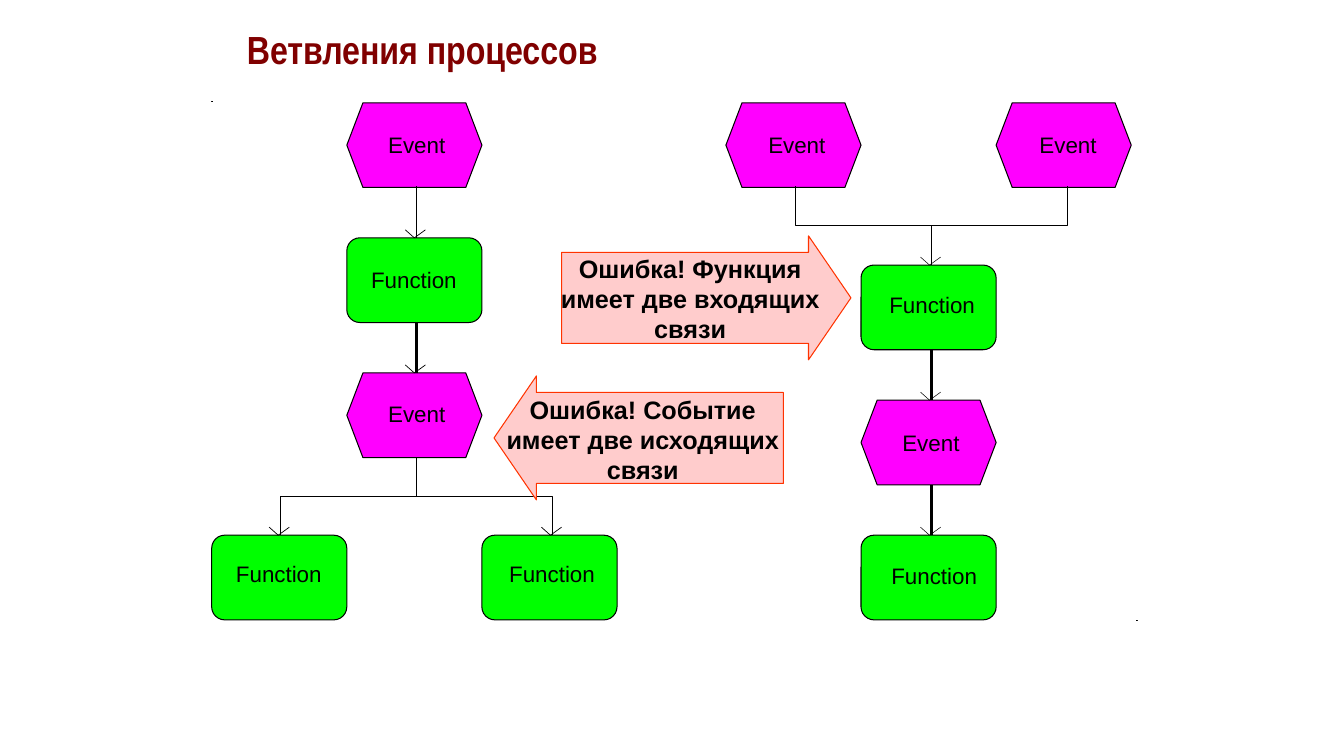
from lxml.etree import SubElement
from pptx import Presentation
from pptx.dml.color import RGBColor
from pptx.enum.shapes import MSO_CONNECTOR, MSO_SHAPE
from pptx.enum.text import MSO_AUTO_SIZE, PP_ALIGN
from pptx.oxml.ns import qn
from pptx.util import Inches, Pt

LABEL = {"size": Pt(16), "name": "Arial"}
NOTE = {"size": Pt(18), "name": "Arial", "bold": True}
TITLE = {"size": Pt(28), "name": "Arial Narrow", "bold": True}


def rgb(value):
    return RGBColor.from_string(value)


class Diagram:
    node_w, node_h, corner = 1.34, 0.84, 0.16
    ink, event_fill, function_fill = "000000", "FF00FF", "00FF00"
    note_fill, note_line = "FFCCCC", "FF3300"

    def __init__(self, slide):
        self.shapes = slide.shapes

    def paint(self, sp, fill, line, width):
        sp.shadow.inherit = False
        if fill:
            sp.fill.solid()
            sp.fill.fore_color.rgb = rgb(fill)
        else:
            sp.fill.background()
        sp.line.color.rgb = rgb(line)
        sp.line.width = Pt(width)

    def text(self, x, y, w, h, words, font, color=ink, align=PP_ALIGN.LEFT, tight=False):
        tf = self.shapes.add_textbox(Inches(x), Inches(y), Inches(w), Inches(h)).text_frame
        tf.word_wrap = not tight
        if tight:
            tf.auto_size = MSO_AUTO_SIZE.SHAPE_TO_FIT_TEXT
            for side in ("left", "top", "right", "bottom"):
                setattr(tf, f"margin_{side}", 0)
        p = tf.paragraphs[0]
        p.alignment = align
        r = p.add_run()
        r.text = words
        for key, value in font.items():
            setattr(r.font, key, value)
        r.font.color.rgb = rgb(color)
        return p

    def outline(self, points, fill=None, width=0.0, close=False):
        start, *rest = [(Inches(x), Inches(y)) for x, y in points]
        builder = self.shapes.build_freeform(*start, scale=1.0)
        builder.add_line_segments(rest, close=close)
        self.paint(builder.convert_to_shape(), fill, self.ink, width)

    def preset(self, kind, x, y, w, h, adjustments, fill, line, width):
        sp = self.shapes.add_shape(kind, Inches(x), Inches(y), Inches(w), Inches(h))
        for i, value in enumerate(adjustments):
            sp.adjustments[i] = value
        self.paint(sp, fill, line, width)

    def event(self, x, y, label_x, label_y):
        right, bottom, middle = x + self.node_w, y + self.node_h, y + self.node_h / 2
        self.outline([(x + self.corner, y), (right - self.corner, y), (right, middle),
                      (right - self.corner, bottom), (x + self.corner, bottom), (x, middle)],
                     self.event_fill, close=True)
        self.text(label_x, label_y, 0.57, 0.27, "Event", LABEL, tight=True)

    def function(self, x, y, label_x, label_y):
        self.preset(MSO_SHAPE.ROUNDED_RECTANGLE, x, y, self.node_w, self.node_h, [0.154],
                    self.function_fill, self.ink, 0)
        self.text(label_x, label_y, 0.85, 0.27, "Function", LABEL, tight=True)

    def line(self, x, top, bottom, width):
        s = self.shapes.add_connector(MSO_CONNECTOR.STRAIGHT, Inches(x), Inches(top),
                                      Inches(x), Inches(bottom))
        s.line.color.rgb = rgb(self.ink)
        s.line.width = Pt(width)
        SubElement(s._element.spPr, qn("a:effectLst"))

    def elbow(self, x1, top, x2, bottom):
        middle = (top + bottom) / 2
        self.outline([(x1, top), (x1, middle), (x2, middle), (x2, bottom)])

    def head(self, x, y, width):
        """Draw an open arrowhead whose tip sits just left of x."""
        self.outline([(x - 0.11, y - 0.08), (x - 0.02, y), (x + 0.09, y - 0.08)], width=width)

    def callout(self, kind, x, y, text_x, text_y, words):
        self.preset(kind, x, y, 2.87, 1.23, [0.734, 0.342], self.note_fill, self.note_line, 0.75)
        self.text(text_x, text_y, 2.99, 1, words, NOTE, align=PP_ALIGN.CENTER)


def main():
    prs = Presentation()
    prs.slide_width, prs.slide_height = Inches(13.33), Inches(7.5)
    d = Diagram(prs.slides.add_slide(prs.slide_layouts[6]))

    title = d.text(2.35, 0.25, 7.98, 0.67, "Ветвления процессов", TITLE, "800000")
    title.line_spacing = 0.9
    d.outline([(2.1, 1), (2.1, 1.01), (2.11, 1.01)], width=0.75)
    d.outline([(11.27, 6.16), (11.28, 6.16), (11.28, 6.15)], width=0.75)

    for node in [(3.44, 1.02, 3.85, 1.3), (3.44, 3.7, 3.85, 3.97), (7.2, 1.02, 7.62, 1.3),
                 (9.88, 1.02, 10.31, 1.3), (8.54, 3.97, 8.95, 4.26)]:
        d.event(*node)
    for node in [(3.44, 2.36, 3.68, 2.64), (2.1, 5.31, 2.34, 5.56), (4.78, 5.31, 5.05, 5.56),
                 (8.54, 2.63, 8.82, 2.89), (8.54, 5.31, 8.84, 5.58)]:
        d.function(*node)

    split_x, join_x = 4.13, 9.24
    for x, top, bottom, width in [(split_x, 1.85, 2.36, 0.5), (split_x, 3.2, 3.7, 0),
                                  (join_x, 3.46, 3.97, 0), (join_x, 4.81, 5.31, 0)]:
        d.line(x, top, bottom, width)
        d.head(x, bottom, 0.5 if x == split_x else 0.38)
    for side in (-1.35, 1.35):
        d.elbow(split_x, 4.54, split_x + side, 5.31)
        d.head(split_x + side, 5.31, 0.5)
        d.elbow(join_x + side, 1.85, join_x, 2.63)
    d.head(join_x, 2.63, 0.38)

    d.callout(MSO_SHAPE.LEFT_ARROW, 4.9, 3.73, 4.88, 3.86,
              "Ошибка! Событие имеет две исходящих связи")
    d.callout(MSO_SHAPE.RIGHT_ARROW, 5.57, 2.34, 5.35, 2.46,
              "Ошибка! Функция имеет две входящих связи")
    prs.save("out.pptx")


if __name__ == "__main__":
    main()
